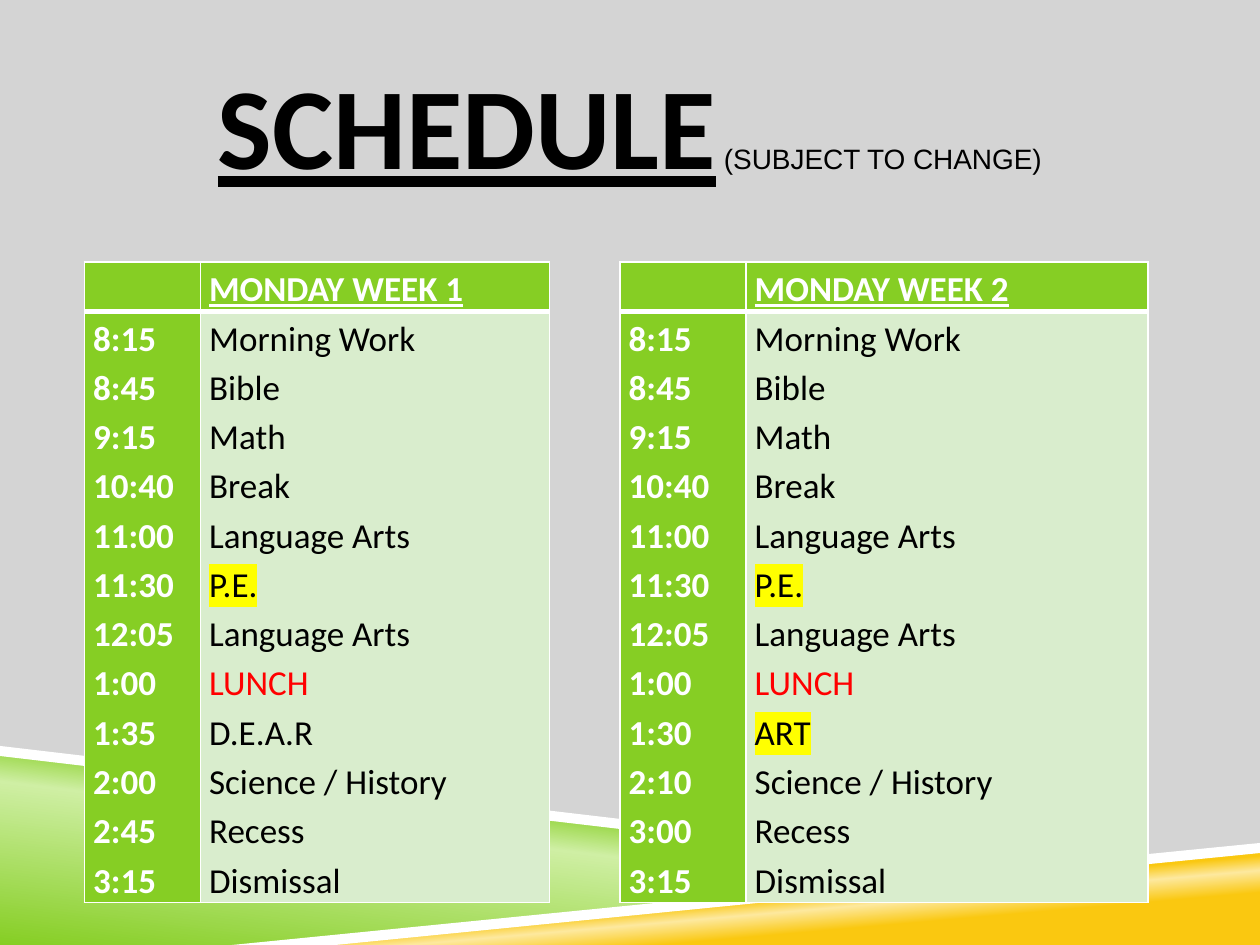
from pptx import Presentation
from pptx.dml.color import RGBColor
from pptx.enum.text import MSO_ANCHOR, MSO_AUTO_SIZE, PP_ALIGN
from pptx.oxml import parse_xml
from pptx.oxml.ns import nsdecls, qn
from pptx.util import Inches, Pt
from lxml.etree import SubElement

COLORS = {
    "bg": "D4D4D4", "green": "86CE24", "light_green": "CFEFA4",
    "gold": "FAC810", "light_gold": "FDE99F", "pale": "D9EDCD",
    "white": "FFFFFF", "black": "000000", "red": "FF0000", "yellow": "FFFF00",
}
WEEK_1 = [
    ("8:15", "Morning Work"), ("8:45", "Bible"), ("9:15", "Math"),
    ("10:40", "Break"), ("11:00", "Language Arts"), ("11:30", "P.E."),
    ("12:05", "Language Arts"), ("1:00", "LUNCH"), ("1:35", "D.E.A.R"),
    ("2:00", "Science / History"), ("2:45", "Recess"), ("3:15", "Dismissal"),
]
WEEK_2 = WEEK_1[:8] + [
    ("1:30", "ART"), ("2:10", "Science / History"), ("3:00", "Recess"),
    ("3:15", "Dismissal"),
]
HIGHLIGHTED = {"P.E.", "ART"}


def rgb(name):
    return RGBColor.from_string(COLORS[name])


def add_run(p, text, size, color, font="Calibri", bold=False, underline=False):
    r = p.add_run()
    r.text = text
    r.font.size = Pt(size)
    r.font.name = font
    r.font.bold = bold
    r.font.underline = underline
    r.font.color.rgb = rgb(color)
    return r


def highlight(r, color):
    hl = parse_xml(f'<a:highlight {nsdecls("a")}><a:srgbClr val="{COLORS[color]}"/></a:highlight>')
    r.font._element.find(qn("a:solidFill")).addnext(hl)


def set_gradient(sp, stops, angle):
    sp.fill.gradient()
    grad = sp._element.spPr.find(qn("a:gradFill"))
    gs = "".join(f'<a:gs pos="{pos * 1000}"><a:srgbClr val="{COLORS[c]}"/></a:gs>' for pos, c in stops)
    grad.getparent().replace(grad, parse_xml(
        f'<a:gradFill {nsdecls("a")} rotWithShape="1"><a:gsLst>{gs}</a:gsLst>'
        f'<a:lin ang="{angle * 60000}" scaled="0"/></a:gradFill>'))


def add_band(s, points):
    start, *rest = [(Inches(x), Inches(y)) for x, y in points]
    builder = s.shapes.build_freeform(*start)
    builder.add_line_segments(rest, close=True)
    sp = builder.convert_to_shape()
    sp.shadow.inherit = False
    sp.line.fill.background()
    return sp


def add_backdrop(s, width, height):
    s.background.fill.solid()
    s.background.fill.fore_color.rgb = rgb("bg")
    green = add_band(s, [(0, 5.97), (7.92, 6.92), (2, height), (0, height)])
    set_gradient(green, [(0, "green"), (52, "light_green"), (66, "green")], 277)
    gold = add_band(s, [(1.98, height), (width, 6.72), (width, height)])
    set_gradient(gold, [(28, "gold"), (40, "light_gold"), (48, "gold")], 265)
    stripes = (
        [(0, 5.92), (0, 6), (7.9, 6.93), (8.32, 6.9)],
        [(width, 6.69), (1.84, height), (2.66, height), (width, 6.77)],
    )
    for points in stripes:
        sp = add_band(s, points)
        sp.fill.solid()
        sp.fill.fore_color.rgb = rgb("white")


def add_title(s, left, top, width, height):
    sp = s.shapes.title
    sp.left, sp.top, sp.width, sp.height = map(Inches, (left, top, width, height))
    tf = sp.text_frame
    tf.word_wrap = True
    tf.auto_size = MSO_AUTO_SIZE.NONE
    tf.vertical_anchor = MSO_ANCHOR.MIDDLE
    tf.margin_left = tf.margin_right = 0
    tf.margin_top = tf.margin_bottom = Inches(0.05)
    p = tf.paragraphs[0]
    p.alignment = PP_ALIGN.CENTER
    p.line_spacing = 1.1
    add_run(p, "SCHEDULE", 66, "black", bold=True, underline=True)
    add_run(p, " (SUBJECT TO CHANGE)", 16, "black", font="Arial")


def style_cell(cell, fill, top, bottom):
    cell.margin_left = cell.margin_right = Inches(0.07)
    cell.margin_top = cell.margin_bottom = 0
    tc_pr = cell._tc.get_or_add_tcPr()
    for side, weight in (("L", 1), ("R", 1), ("T", top), ("B", bottom)):
        ln = SubElement(tc_pr, qn(f"a:ln{side}"), w=str(Pt(weight)))
        SubElement(SubElement(ln, qn("a:solidFill")), qn("a:srgbClr"), val=COLORS["white"])
    cell.fill.solid()
    cell.fill.fore_color.rgb = rgb(fill)


def fill_cell(cell, lines, color, bold=False, underline=False):
    tf = cell.text_frame
    for i, text in enumerate(lines):
        p = tf.add_paragraph() if i else tf.paragraphs[0]
        p.line_spacing = 1.15
        r = add_run(p, text, 20, "red" if text == "LUNCH" else color,
                    bold=bold, underline=underline)
        if text in HIGHLIGHTED:
            highlight(r, "yellow")


def add_schedule(s, left, top, col_widths, heading, entries):
    row_heights = (0.39, 4.69)
    frame = s.shapes.add_table(2, 2, Inches(left), Inches(top),
                               Inches(sum(col_widths)), Inches(sum(row_heights)))
    table = frame.table
    for col, width in zip(table.columns, col_widths):
        col.width = Inches(width)
    for row, height in zip(table.rows, row_heights):
        row.height = Inches(height)
    for c in range(2):
        style_cell(table.cell(0, c), "green", 1, 3)
        style_cell(table.cell(1, c), ("green", "pale")[c], 3, 1)
    times, subjects = zip(*entries)
    fill_cell(table.cell(0, 1), [heading], "white", bold=True, underline=True)
    fill_cell(table.cell(1, 0), times, "white", bold=True)
    fill_cell(table.cell(1, 1), subjects, "black")


def main():
    prs = Presentation()
    prs.slide_width, prs.slide_height = Inches(10), Inches(7.5)
    s = prs.slides.add_slide(prs.slide_layouts[5])
    add_backdrop(s, 10, 7.5)
    add_title(s, 0.75, 0.3, 8.5, 1.25)
    add_schedule(s, 0.67, 2.08, (0.92, 2.77), "MONDAY WEEK 1", WEEK_1)
    add_schedule(s, 4.92, 2.08, (1, 3.19), "MONDAY WEEK 2", WEEK_2)
    prs.save("out.pptx")


if __name__ == "__main__":
    main()
